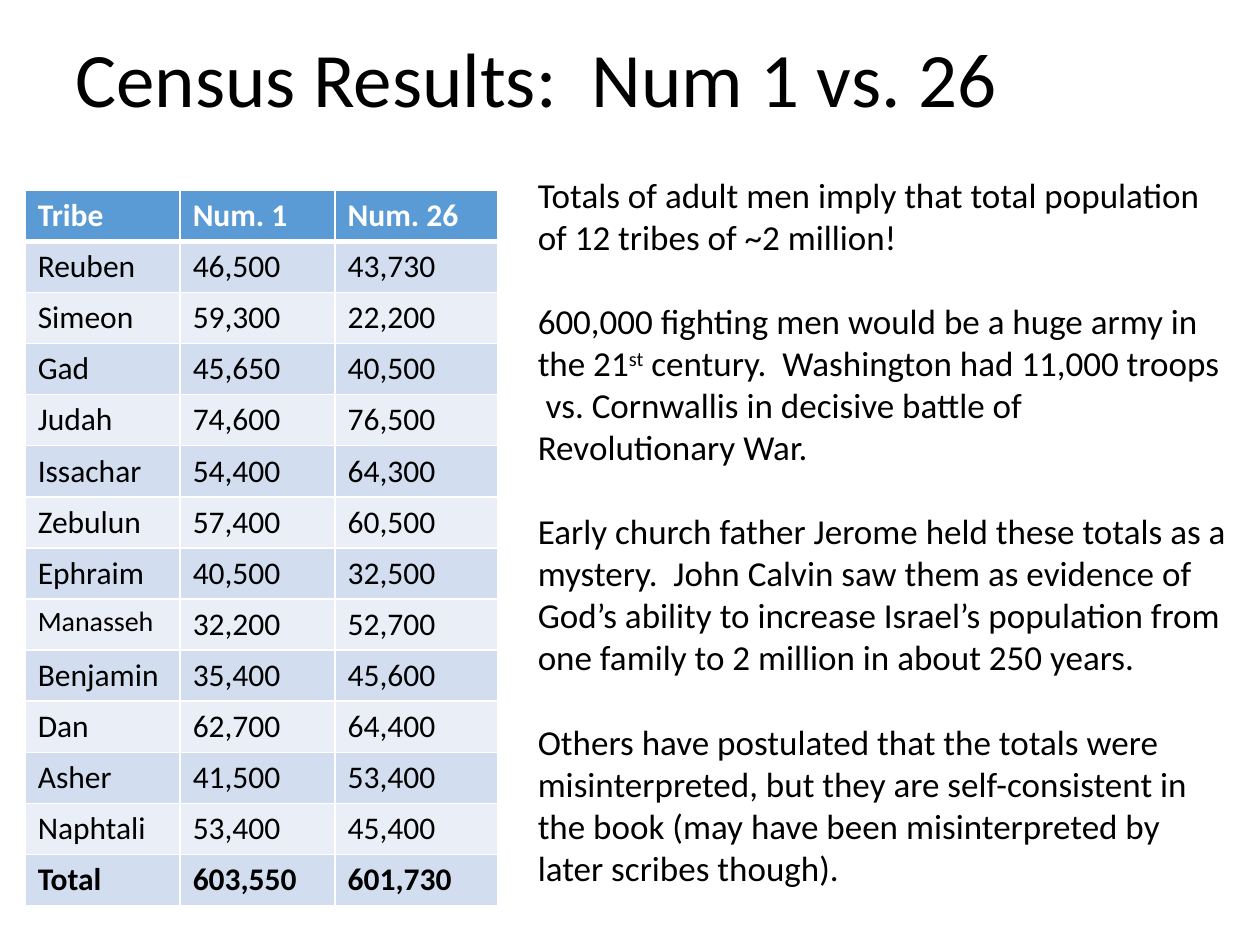
from lxml.etree import SubElement
from pptx import Presentation
from pptx.dml.color import RGBColor
from pptx.enum.text import MSO_ANCHOR, PP_ALIGN
from pptx.oxml.ns import qn
from pptx.util import Inches, Pt

TITLE = "Census Results:  Num 1 vs. 26"
HEADER = ("Tribe", "Num. 1", "Num. 26")
CENSUS = [
    ("Reuben", "46,500", "43,730"),
    ("Simeon", "59,300", "22,200"),
    ("Gad", "45,650", "40,500"),
    ("Judah", "74,600", "76,500"),
    ("Issachar", "54,400", "64,300"),
    ("Zebulun", "57,400", "60,500"),
    ("Ephraim", "40,500", "32,500"),
    ("Manasseh", "32,200", "52,700"),
    ("Benjamin", "35,400", "45,600"),
    ("Dan", "62,700", "64,400"),
    ("Asher", "41,500", "53,400"),
    ("Naphtali", "53,400", "45,400"),
]
TOTAL = ("Total", "603,550", "601,730")
# Each note is a list of (text, is superscript) pieces.
NOTES = [
    [("Totals of adult men imply that total population of 12 tribes of ~2 million!", False)],
    [("600,000 fighting men would be a huge army in the 21", False),
     ("st", True),
     (" century.  Washington had 11,000 troops  vs. Cornwallis in decisive battle of "
      "Revolutionary War.", False)],
    [("Early church father Jerome held these totals as a mystery.  John Calvin saw them as "
      "evidence of God’s ability to increase Israel’s population from one family to "
      "2 million in about 250 years.", False)],
    [("Others have postulated that the totals were misinterpreted, but they are "
      "self-consistent in the book (may have been misinterpreted by later scribes though).",
      False)],
]
COLUMN_WIDTHS = (1.23, 1.23, 1.29)
TABLE_HEIGHT = 5.67
BLACK, WHITE, HEADER_BLUE = "000000", "FFFFFF", "5B9BD5"
BANDS = ("EAEFF7", "D2DEEF")


def color(hex_string):
    return RGBColor.from_string(hex_string)


def format_font(font, size, hex_string=BLACK, bold=False):
    font.name = "Calibri"
    font.size = Pt(size)
    font.bold = bold
    font.color.rgb = color(hex_string)


def add_borders(cell, bottom_width):
    """Draw white cell borders; call before setting the fill to keep XML order."""
    properties = cell._tc.get_or_add_tcPr()
    for side, width in (("L", 1), ("R", 1), ("T", 1), ("B", bottom_width)):
        line = SubElement(properties, qn(f"a:ln{side}"), w=str(Pt(width)))
        fill = SubElement(line, qn("a:solidFill"))
        SubElement(fill, qn("a:srgbClr"), val=WHITE)


def add_title(slide):
    title = slide.shapes.title
    title.left, title.top = Inches(0.5), Inches(0.03)
    title.width, title.height = Inches(9), Inches(1.25)
    title.text_frame.text = TITLE
    title.text_frame.vertical_anchor = MSO_ANCHOR.MIDDLE
    paragraph = title.text_frame.paragraphs[0]
    paragraph.alignment = PP_ALIGN.LEFT
    paragraph.line_spacing = 0.9
    format_font(paragraph.runs[0].font, 44)


def add_census_table(slide):
    rows = [HEADER, *CENSUS, TOTAL]
    table = slide.shapes.add_table(
        len(rows), len(HEADER), Inches(0.2), Inches(1.51),
        Inches(sum(COLUMN_WIDTHS)), Inches(TABLE_HEIGHT)).table
    for column, width in zip(table.columns, COLUMN_WIDTHS):
        column.width = Inches(width)
    for row_index, values in enumerate(rows):
        table.rows[row_index].height = Inches(TABLE_HEIGHT / len(rows))
        is_header = values is HEADER
        for column_index, value in enumerate(values):
            cell = table.cell(row_index, column_index)
            cell.text_frame.text = value
            format_font(cell.text_frame.paragraphs[0].runs[0].font,
                        16 if value == "Manasseh" else 18,
                        WHITE if is_header else BLACK,
                        bold=is_header or values is TOTAL)
            add_borders(cell, bottom_width=3 if is_header else 1)
            cell.fill.solid()
            cell.fill.fore_color.rgb = color(HEADER_BLUE if is_header else BANDS[row_index % 2])


def add_notes_text(slide):
    text_frame = slide.shapes.add_textbox(
        Inches(4.17), Inches(1.33), Inches(5.67), Inches(5.82)).text_frame
    text_frame.word_wrap = True
    for index, pieces in enumerate(NOTES):
        paragraph = text_frame.add_paragraph() if index else text_frame.paragraphs[0]
        if index:
            paragraph.space_before = Pt(24)
        for text, is_superscript in pieces:
            run = paragraph.add_run()
            run.text = text
            format_font(run.font, 20)
            if is_superscript:
                run._r.get_or_add_rPr().set("baseline", "30000")


def main():
    presentation = Presentation()
    presentation.slide_width, presentation.slide_height = Inches(10), Inches(7.5)
    slide = presentation.slides.add_slide(presentation.slide_layouts[5])
    add_title(slide)
    add_census_table(slide)
    add_notes_text(slide)
    presentation.save("out.pptx")


if __name__ == "__main__":
    main()
